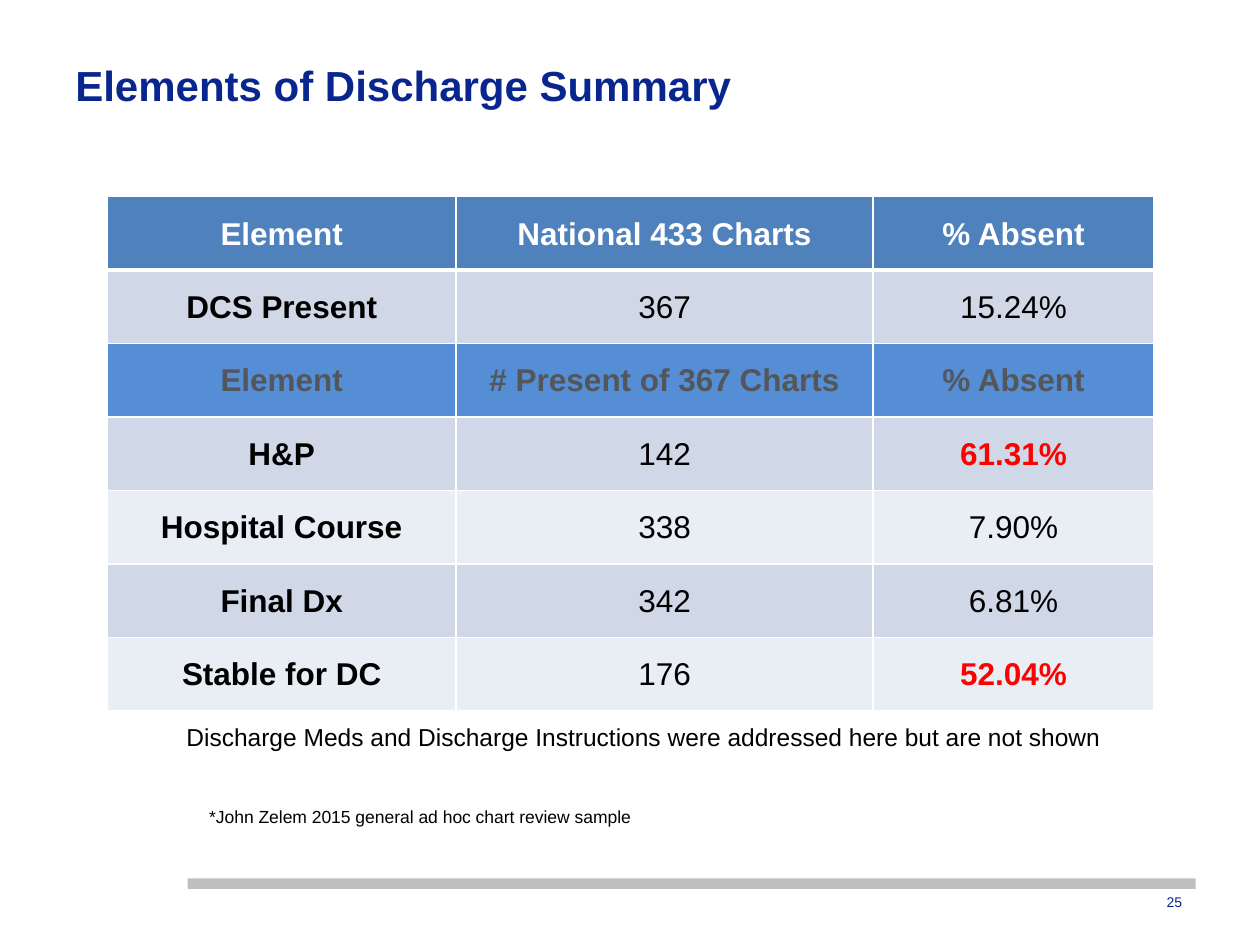
from dataclasses import dataclass

from lxml import etree
from pptx import Presentation
from pptx.dml.color import RGBColor
from pptx.enum.shapes import MSO_SHAPE
from pptx.enum.text import MSO_ANCHOR, PP_ALIGN
from pptx.oxml.ns import qn
from pptx.util import Pt

RECTANGLE = MSO_SHAPE.RECTANGLE
LEFT, CENTER, RIGHT = PP_ALIGN.LEFT, PP_ALIGN.CENTER, PP_ALIGN.RIGHT
TOP, MIDDLE = MSO_ANCHOR.TOP, MSO_ANCHOR.MIDDLE


@dataclass(frozen=True)
class Theme:
    font: str = "Arial"
    navy: str = "08268D"
    black: str = "000000"
    white: str = "FFFFFF"
    alert: str = "FF0000"
    subheader_text: str = "53565A"
    header_fill: str = "4F81BD"
    subheader_fill: str = "558ED5"
    dark_band: str = "D0D8E8"
    light_band: str = "E9EDF4"
    rule: str = "BFBFBF"
    title_size: int = 24
    table_size: int = 18
    note_size: int = 14
    source_size: int = 10
    number_size: int = 8


THEME = Theme()
HEADER_ROW, SUBHEADER_ROW = 0, 2
ALERTS = {"61.31%", "52.04%"}
ROWS = [
    ("Element", "National 433 Charts", "% Absent"),
    ("DCS Present", "367", "15.24%"),
    ("Element", "# Present of 367 Charts", "% Absent"),
    ("H&P", "142", "61.31%"),
    ("Hospital Course", "338", "7.90%"),
    ("Final Dx", "342", "6.81%"),
    ("Stable for DC", "176", "52.04%"),
]
COLUMN_WIDTHS = (199.2, 238.3, 160.5)
ROW_HEIGHT = 42


def style_paragraph(paragraph, size, color, bold=False, align=LEFT):
    paragraph.alignment = align
    font = paragraph.font
    font.name, font.size, font.bold = THEME.font, Pt(size), bold
    font.color.rgb = RGBColor.from_string(color)


def add_text(slide, text, box, size, color, bold=False, align=LEFT,
             anchor=TOP, wrap=True, inset=None):
    frame = slide.shapes.add_textbox(*map(Pt, box)).text_frame
    frame.word_wrap = wrap
    frame.vertical_anchor = anchor
    if inset is not None:
        frame.margin_left = frame.margin_right = Pt(inset)
        frame.margin_top = frame.margin_bottom = Pt(inset)
    frame.text = text
    style_paragraph(frame.paragraphs[0], size, color, bold, align)


def add_footer_rule(slide):
    shape = slide.shapes.add_shape(RECTANGLE, Pt(107.3), Pt(502), Pt(576), Pt(6))
    shape.shadow.inherit = False
    shape.fill.solid()
    shape.fill.fore_color.rgb = RGBColor.from_string(THEME.rule)
    shape.line.fill.background()


def set_borders(cell, bottom_width, top_width):
    """Put the borders before the fill, as the cell schema orders them."""
    properties = cell._tc.get_or_add_tcPr()
    widths = {"a:lnL": 1, "a:lnR": 1, "a:lnT": top_width, "a:lnB": bottom_width}
    for position, (tag, width) in enumerate(widths.items()):
        line = etree.Element(qn(tag), w=str(Pt(width)))
        fill = etree.SubElement(line, qn("a:solidFill"))
        etree.SubElement(fill, qn("a:srgbClr"), val=THEME.white)
        properties.insert(position, line)


def cell_colors(row, column, text):
    """Return the fill and text colours of a cell."""
    if row == HEADER_ROW:
        return THEME.header_fill, THEME.white
    if row == SUBHEADER_ROW:
        return THEME.subheader_fill, THEME.subheader_text
    fill = THEME.dark_band if row % 2 else THEME.light_band
    return fill, THEME.alert if text in ALERTS else THEME.black


def fill_cell(cell, row, column, text):
    fill, color = cell_colors(row, column, text)
    bold = row in (HEADER_ROW, SUBHEADER_ROW) or column == 0 or text in ALERTS
    cell.fill.solid()
    cell.fill.fore_color.rgb = RGBColor.from_string(fill)
    cell.vertical_anchor = MIDDLE
    cell.margin_left = cell.margin_right = cell.margin_top = Pt(0.75)
    cell.margin_bottom = 0
    cell.text = text
    style_paragraph(cell.text_frame.paragraphs[0], THEME.table_size, color, bold, CENTER)
    set_borders(cell, bottom_width=3 if row == HEADER_ROW else 1,
                top_width=3 if row == HEADER_ROW + 1 else 1)


def add_chart_review_table(slide):
    table = slide.shapes.add_table(
        len(ROWS), len(COLUMN_WIDTHS), Pt(61.4), Pt(112.4),
        Pt(sum(COLUMN_WIDTHS)), Pt(ROW_HEIGHT * len(ROWS))).table
    for column, width in zip(table.columns, COLUMN_WIDTHS):
        column.width = Pt(width)
    for row, texts in enumerate(ROWS):
        table.rows[row].height = Pt(ROW_HEIGHT)
        for column, text in enumerate(texts):
            fill_cell(table.cell(row, column), row, column, text)


def main():
    presentation = Presentation()
    presentation.slide_width, presentation.slide_height = Pt(720), Pt(540)
    slide = presentation.slides.add_slide(presentation.slide_layouts[6])

    add_footer_rule(slide)
    add_text(slide, "Elements of Discharge Summary", (36, 28.8, 648, 38.9),
             THEME.title_size, THEME.navy, bold=True, anchor=MIDDLE)
    add_text(slide, "Discharge Meds and Discharge Instructions were addressed here "
             "but are not shown", (99.4, 409, 539.3, 24.5),
             THEME.note_size, THEME.black, wrap=False)
    add_chart_review_table(slide)
    add_text(slide, "*John Zelem 2015 general ad hoc chart review sample",
             (119.5, 460.8, 312.5, 20.2), THEME.source_size, THEME.black,
             wrap=False, inset=0)
    add_text(slide, "25", (646.6, 508.3, 36, 14.4), THEME.number_size, THEME.navy,
             align=RIGHT, anchor=MIDDLE)

    presentation.save("out.pptx")


if __name__ == "__main__":
    main()
